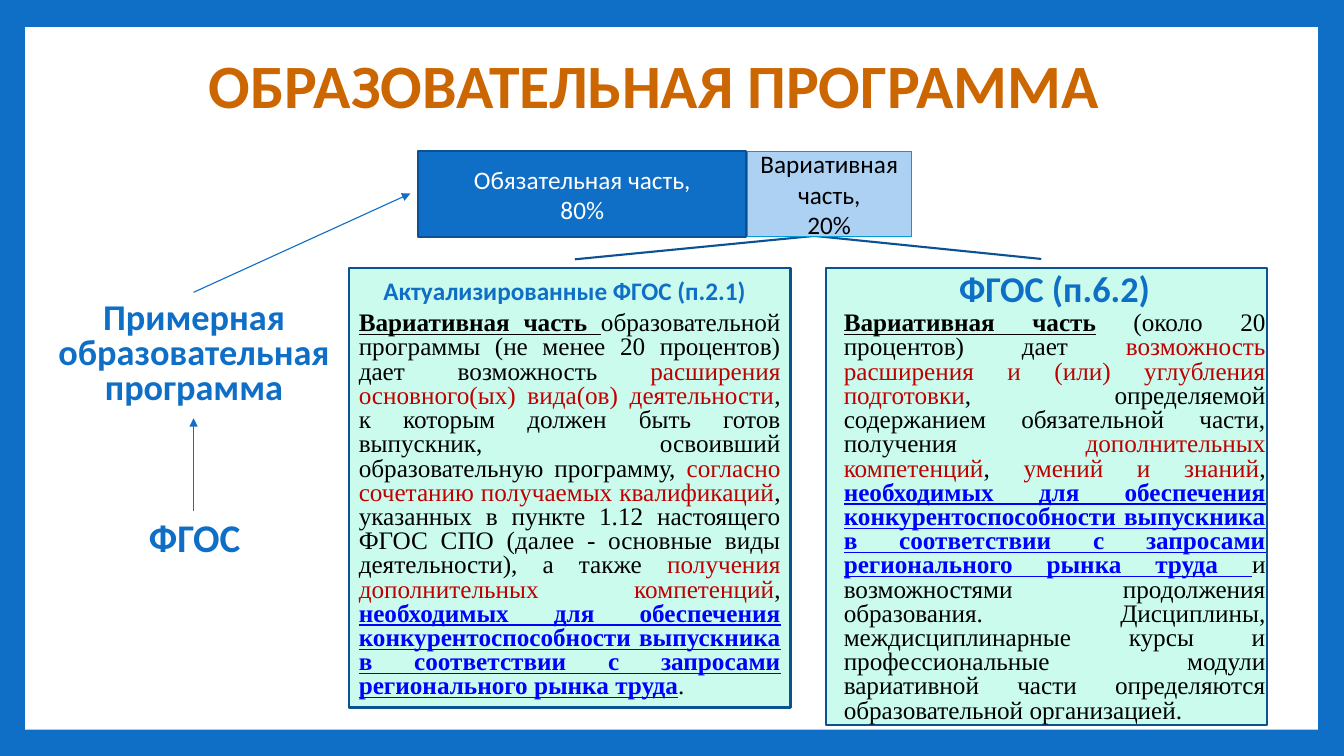
from pptx import Presentation
from pptx.util import Inches, Pt
from pptx.dml.color import RGBColor
from pptx.enum.shapes import MSO_CONNECTOR, MSO_SHAPE
from pptx.enum.text import MSO_ANCHOR, MSO_AUTO_SIZE, PP_ALIGN
from pptx.oxml.ns import qn
from lxml import etree

RECT, CALL = MSO_SHAPE.RECTANGLE, MSO_SHAPE.LINE_CALLOUT_1
LINE = MSO_CONNECTOR.STRAIGHT
MID, TOP = MSO_ANCHOR.MIDDLE, MSO_ANCHOR.TOP
MID_AL, JUST = PP_ALIGN.CENTER, PP_ALIGN.JUSTIFY
GROW = MSO_AUTO_SIZE.SHAPE_TO_FIT_TEXT
BLUE, NAVY, WHITE, BLACK, RED = "0F6FC6", "0B5292", "FFFFFF", "000000", "C00000"
SANS, SERIF = "Calibri", "Times New Roman"


def paint(item, color):
    if hasattr(item, "solid"):
        item.solid()
        item = item.fore_color
    item.rgb = RGBColor.from_string(color)


def write(shape, paras, anchor, para, font):
    frame = shape.text_frame
    frame.word_wrap = True
    frame.vertical_anchor = anchor
    for i, runs in enumerate(paras):
        p = frame.add_paragraph() if i else frame.paragraphs[0]
        for key, val in para.items():
            setattr(p, key, val)
        for text, color, strong in runs:
            run = p.add_run()
            run.text = text
            for key, val in font.items():
                setattr(run.font, key, val)
            if strong:
                run.font.bold = True
                run.font.underline = font["name"] == SERIF
            paint(run.font.color, color)


deck = Presentation()
deck.slide_width, deck.slide_height = Inches(13.33), Inches(7.5)
slide = deck.slides.add_slide(deck.slide_layouts[6])
paint(slide.background.fill, BLUE)
shapes = slide.shapes

page = shapes.add_shape(RECT, Inches(0.25), Inches(0.27), Inches(12.82), Inches(6.97))
page.shadow.inherit = False
paint(page.fill, WHITE)
page.line.fill.background()

for left, high, flip in [(8.19, 4.53, True), (3.46, 4.36, False)]:
    card = shapes.add_shape(CALL, Inches(left), Inches(2.66), Inches(4.38), Inches(high))
    card.shadow.inherit = False
    for i, val in enumerate([-0.02, 0.512, -0.074, 1.062]):
        card.adjustments[i] = val
    if flip:
        card._element.spPr.find(qn("a:xfrm")).set("flipH", "1")
    paint(card.fill, "CAFBED")
    paint(card.line.fill, NAVY)
    card.line.width = Pt(1.5)

heads = [
    ("ОБРАЗОВАТЕЛЬНАЯ ПРОГРАММА", 0.74, 0.25, 11.5, 1.25, 44, 0.9, "CC6600"),
    ("ФГОС", 1.04, 4.73, 1.78, 1.25, 28, 0.9, BLUE),
    ("Примерная образовательная программа", 0.39, 2.9, 3.07, 1.25, 25.9, 0.8, BLUE),
    ("Актуализированные ФГОС (п.2.1)", 3.49, 2.66, 4.22, 0.48, 18, 0.9, BLUE),
    ("ФГОС (п.6.2)", 8.8, 2.66, 3.32, 0.48, 25.9, 0.8, BLUE),
]
for text, left, top, wide, high, size, gap, color in heads:
    box = shapes.add_textbox(Inches(left), Inches(top), Inches(wide), Inches(high))
    write(box, [[(text, color, True)]], MID,
          {"alignment": MID_AL, "line_spacing": gap}, {"name": SANS, "size": Pt(size)})

for x1, y1, x2, y2 in [(1.92, 5.07, 1.92, 4.15), (1.92, 2.9, 4.07, 1.92)]:
    arrow = shapes.add_connector(LINE, Inches(x1), Inches(y1), Inches(x2), Inches(y2))
    paint(arrow.line.fill, BLUE)
    arrow.line.width = Pt(0.79)
    etree.SubElement(arrow.line._get_or_add_ln(), qn("a:tailEnd"), type="triangle")
    etree.SubElement(arrow._element.spPr, qn("a:effectLst"))

parts = [
    ("Обязательная часть,", "80%", 4.15, 3.25, BLUE, NAVY, 1.5, WHITE),
    ("Вариативная часть,", "20%", 7.41, 1.63, "ACD1F3", "009DD9", 0.79, BLACK),
]
for name, share, left, wide, fill, edge, thick, color in parts:
    bar = shapes.add_shape(RECT, Inches(left), Inches(1.5), Inches(wide), Inches(0.85))
    bar.shadow.inherit = False
    paint(bar.fill, fill)
    paint(bar.line.fill, edge)
    bar.line.width = Pt(thick)
    write(bar, [[(name, color, False)], [(share, color, False)]], MID,
          {"alignment": MID_AL}, {"name": SANS, "size": Pt(18)})

need = ("необходимых для обеспечения конкурентоспособности выпускника "
        "в соответствии с запросами регионального рынка труда")
old = [
    ("Вариативная часть ", BLACK, True),
    ("образовательной программы (не менее 20 процентов) дает возможность ", BLACK, False),
    ("расширения основного(ых) вида(ов) деятельности", RED, False),
    (", к которым должен быть готов выпускник, освоивший образовательную программу, ", BLACK, False),
    ("согласно сочетанию получаемых квалификаций", RED, False),
    (", указанных в пункте 1.12 настоящего ФГОС СПО (далее - основные виды деятельности), "
     "а также ", BLACK, False),
    ("получения дополнительных компетенций", RED, False),
    (", ", BLACK, False),
    (need, "0000FF", True),
    (".", BLACK, False),
]
new = [
    ("Вариативная часть", BLACK, True),
    (" (около 20 процентов) дает ", BLACK, False),
    ("возможность расширения и (или) углубления подготовки", RED, False),
    (", определяемой содержанием обязательной части, получения ", BLACK, False),
    ("дополнительных компетенций", RED, False),
    (", ", BLACK, False),
    ("умений и знаний", RED, False),
    (", ", BLACK, False),
    (need + " ", "0000FF", True),
    ("и возможностями продолжения образования. Дисциплины, междисциплинарные курсы и "
     "профессиональные модули вариативной части определяются образовательной "
     "организацией.", BLACK, False),
]
for runs, left, high in [(old, 3.46, 3.98), (new, 8.27, 4.22)]:
    body = shapes.add_textbox(Inches(left), Inches(3.05), Inches(4.38), Inches(high))
    write(body, [runs], TOP,
          {"alignment": JUST, "line_spacing": 0.8, "space_after": Pt(12.8)},
          {"name": SERIF, "size": Pt(18)})
    body.text_frame.auto_size = GROW

deck.save("out.pptx")
